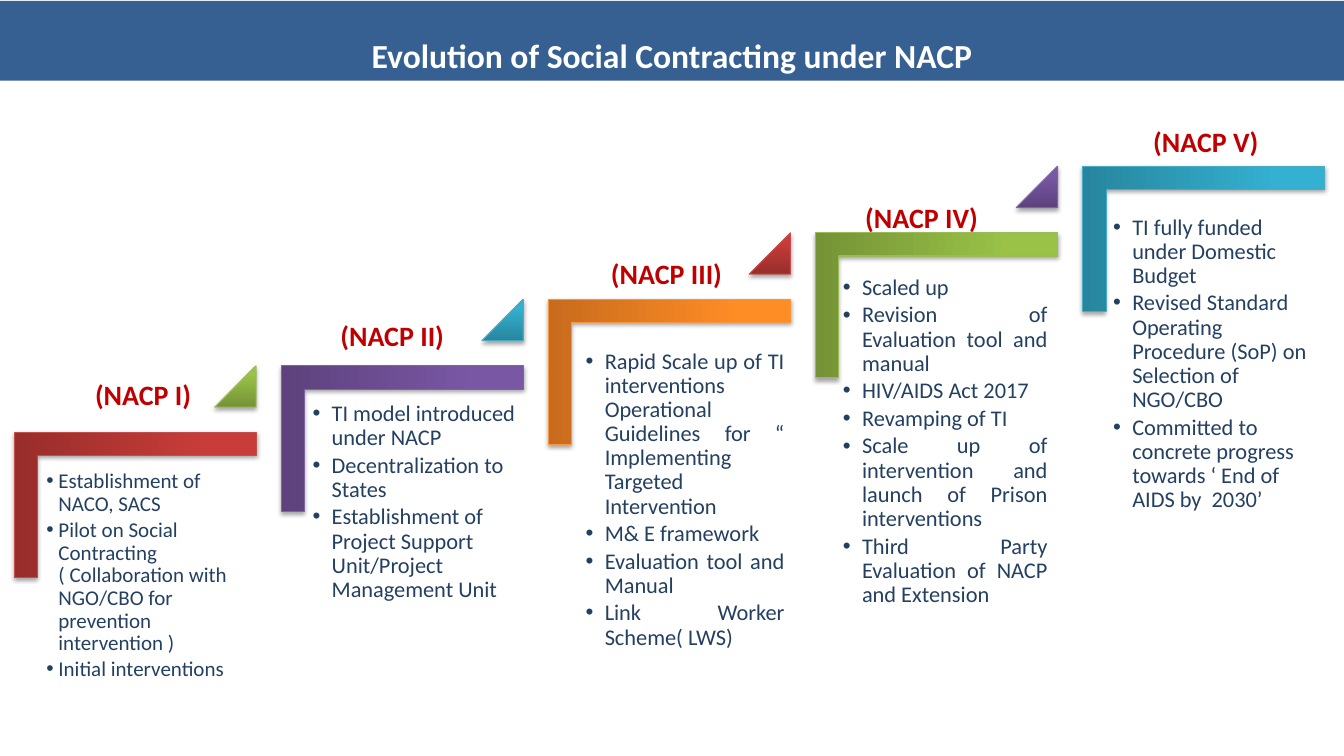
import pptx
import pptx.util
import pptx.dml.color
import pptx.enum.shapes
import pptx.enum.text
import pptx.oxml
import pptx.oxml.ns

W, H = 13.33, 7.5
STEP_X, STEP_Y = 2.65, 0.66
FIRST_X, FIRST_Y = 0.14, 4.29
BRACKET_W, BRACKET_H = 2.4, 1.44
WEDGE = 0.41
NAVY, CRIMSON = "244061", "C00000"
SHAPES = pptx.enum.shapes.MSO_SHAPE
ALIGN = pptx.enum.text.PP_ALIGN
ANCHOR = pptx.enum.text.MSO_ANCHOR

RED = ("982D2B", "C83D39", "BF504D")
PURPLE = ("5D427D", "7A57A5", "8064A2")
ORANGE = ("C86B1D", "FF8D25", "F79543")
GREEN = ("759336", "99C247", "9BBB59")
TEAL = ("27869E", "34B0D0", "49ACC5")

PHASES = [
    {"label": "(NACP I)", "label_box": (0.13, -0.93, 2.3, 0.77), "colors": RED, "wedge": GREEN,
     "body_at": (0.26, 0.02), "inset": 0.06, "top": 0.36, "size": 15, "indent": 0.12,
     "align": ALIGN.LEFT,
     "items": ["Establishment of NACO, SACS",
               "Pilot on Social Contracting ( Collaboration with NGO/CBO for prevention intervention )",
               "Initial interventions"]},
    {"label": "(NACP II)", "label_box": (0.04, -0.86, 2.12, 0.77), "colors": PURPLE, "wedge": TEAL,
     "body_at": (0.24, -0.03), "inset": 0.07, "top": 0.39, "size": 16, "indent": 0.19,
     "align": ALIGN.LEFT,
     "items": ["TI model introduced under NACP",
               "Decentralization to States",
               "Establishment of Project Support Unit/Project Management Unit"]},
    {"label": "(NACP III)", "label_box": (0.11, -0.81, 2.12, 0.77), "colors": ORANGE, "wedge": RED,
     "body_at": (0.27, -0.08), "inset": 0.1, "top": 0.58, "size": 16, "indent": 0.19,
     "align": ALIGN.JUSTIFY,
     "items": ["Rapid Scale up of TI interventions Operational Guidelines for “ Implementing "
               "Targeted Intervention",
               "M& E framework",
               "Evaluation tool and Manual",
               "Link Worker Scheme( LWS)"]},
    {"label": "(NACP IV)", "label_box": (-0.01, -0.38, 2.12, 0.44), "colors": GREEN, "wedge": PURPLE,
     "body_at": (0.2, 0), "inset": 0.07, "top": 0.43, "size": 16, "indent": 0.19,
     "align": ALIGN.JUSTIFY,
     "items": ["Scaled up",
               "Revision of Evaluation tool and manual",
               "HIV/AIDS Act 2017",
               "Revamping of TI",
               "Scale up of intervention and launch of Prison interventions",
               "Third Party Evaluation of NACP and Extension"]},
    {"label": "(NACP V)", "label_box": (0.16, -0.8, 2.12, 0.77), "colors": TEAL, "wedge": None,
     "body_at": (0.23, -0.18), "inset": 0.07, "top": 0.67, "size": 16, "indent": 0.19,
     "align": ALIGN.LEFT,
     "items": ["TI fully funded under Domestic Budget",
               "Revised Standard Operating Procedure (SoP) on Selection of NGO/CBO",
               "Committed to concrete progress towards ‘ End of AIDS by  2030’"]},
]


def rgb(value):
    """Turn a hex string into a colour."""
    return pptx.dml.color.RGBColor.from_string(value)


def inches(*values):
    """Turn numbers into a list of lengths."""
    return [pptx.util.Inches(v) for v in values]


def apply(target, formats):
    """Set each attribute of the target from a dict."""
    for name, value in formats.items():
        setattr(target, name, value)


def add_run(p, text, size, color, bold=False):
    """Add one formatted run to a paragraph."""
    r = p.add_run()
    r.text = text
    apply(r.font, {"name": "Calibri", "size": pptx.util.Pt(size), "bold": bold})
    r.font.color.rgb = rgb(color)


def add_bullet(p, indent):
    """Give a paragraph a hanging round bullet."""
    pPr = p._p.get_or_add_pPr()
    pPr.set("marL", str(pptx.util.Inches(indent)))
    pPr.set("indent", str(-pptx.util.Inches(indent)))
    ns = pptx.oxml.ns.nsdecls("a")
    for xml in (f'<a:buClr {ns}><a:srgbClr val="{NAVY}"/></a:buClr>',
                f'<a:buFont {ns} typeface="Arial"/>',
                f'<a:buChar {ns} char="•"/>'):
        pPr.append(pptx.oxml.parse_xml(xml))


def add_glossy(s, kind, box, colors):
    """Add a shape with a gradient, a thin line and a soft shadow."""
    dark, light, edge = colors
    sp = s.shapes.add_shape(kind, *inches(*box))
    sp.fill.gradient()
    sp.fill.gradient_angle = 90
    for stop, color, position in zip(sp.fill.gradient_stops, (dark, light), (0, 0.8)):
        stop.color.rgb = rgb(color)
        stop.position = position
    sp.line.color.rgb = rgb(edge)
    sp.line.width = pptx.util.Pt(0.75)
    sp._element.spPr.append(pptx.oxml.parse_xml(
        f'<a:effectLst {pptx.oxml.ns.nsdecls("a")}>'
        '<a:outerShdw blurRad="40000" dist="23000" dir="5400000" rotWithShape="0">'
        '<a:srgbClr val="000000"><a:alpha val="35000"/></a:srgbClr>'
        '</a:outerShdw></a:effectLst>'))
    return sp


def add_text_box(s, box, margins, anchor):
    """Add a wrapping text box and return its frame."""
    tf = s.shapes.add_textbox(*inches(*box)).text_frame
    left, top, right, bottom = inches(*margins)
    apply(tf, {"word_wrap": True, "vertical_anchor": anchor, "margin_left": left,
               "margin_top": top, "margin_right": right, "margin_bottom": bottom})
    return tf


def add_title(s, box, text):
    """Format the title placeholder as a banner."""
    sp = s.shapes.title
    left, top, width, height = inches(*box)
    apply(sp, {"left": left, "top": top, "width": width, "height": height})
    sp.fill.solid()
    sp.fill.fore_color.rgb = rgb("366092")
    tf = sp.text_frame
    apply(tf, {"vertical_anchor": ANCHOR.BOTTOM, "word_wrap": True,
               "auto_size": pptx.enum.text.MSO_AUTO_SIZE.NONE})
    p = tf.paragraphs[0]
    apply(p, {"alignment": ALIGN.CENTER, "line_spacing": 0.9})
    add_run(p, text, 24, "FFFFFF", True)


def add_bullets(s, x, y, phase):
    """Add the bulleted text of a phase."""
    dx, dy = phase["body_at"]
    inset, size = phase["inset"], phase["size"]
    tf = add_text_box(s, (x + dx, y + dy, 2.17, 1.9),
                      (inset, phase["top"], inset, inset), ANCHOR.TOP)
    for i, item in enumerate(phase["items"]):
        p = tf.add_paragraph() if i else tf.paragraphs[0]
        apply(p, {"alignment": phase["align"], "line_spacing": 0.9,
                  "space_before": pptx.util.Pt(0.15 * size if i else 0)})
        add_bullet(p, phase["indent"])
        add_run(p, item, size, NAVY)


def add_phase(s, x, y, phase):
    """Add one stair step with its bracket, wedge, text and label."""
    shift = (BRACKET_W - BRACKET_H) / 2
    bracket = add_glossy(s, SHAPES.CORNER, (x + shift, y - shift, BRACKET_H, BRACKET_W),
                         phase["colors"])
    bracket.rotation = 90
    for i in range(2):
        bracket.adjustments[i] = 0.16
    add_bullets(s, x, y, phase)
    if phase["wedge"]:
        wedge = add_glossy(s, SHAPES.ISOSCELES_TRIANGLE,
                           (x + BRACKET_W - WEDGE, y - STEP_Y, WEDGE, WEDGE), phase["wedge"])
        wedge.adjustments[0] = 1
    dx, dy, width, height = phase["label_box"]
    tf = add_text_box(s, (x + dx, y + dy, width, height), (0.1, 0.05, 0.1, 0.05), ANCHOR.BOTTOM)
    p = tf.paragraphs[0]
    p.alignment = ALIGN.CENTER
    add_run(p, phase["label"], 20, CRIMSON, True)


def main():
    """Build and save the slide."""
    prs = pptx.Presentation()
    prs.slide_width, prs.slide_height = inches(W, H)
    s = prs.slides.add_slide(prs.slide_layouts[5])
    add_title(s, (0, 0.01, W, 0.79), "Evolution of Social Contracting under NACP")
    for i, phase in enumerate(PHASES):
        add_phase(s, FIRST_X + i * STEP_X, FIRST_Y - i * STEP_Y, phase)
    prs.save("out.pptx")


if __name__ == "__main__":
    main()
